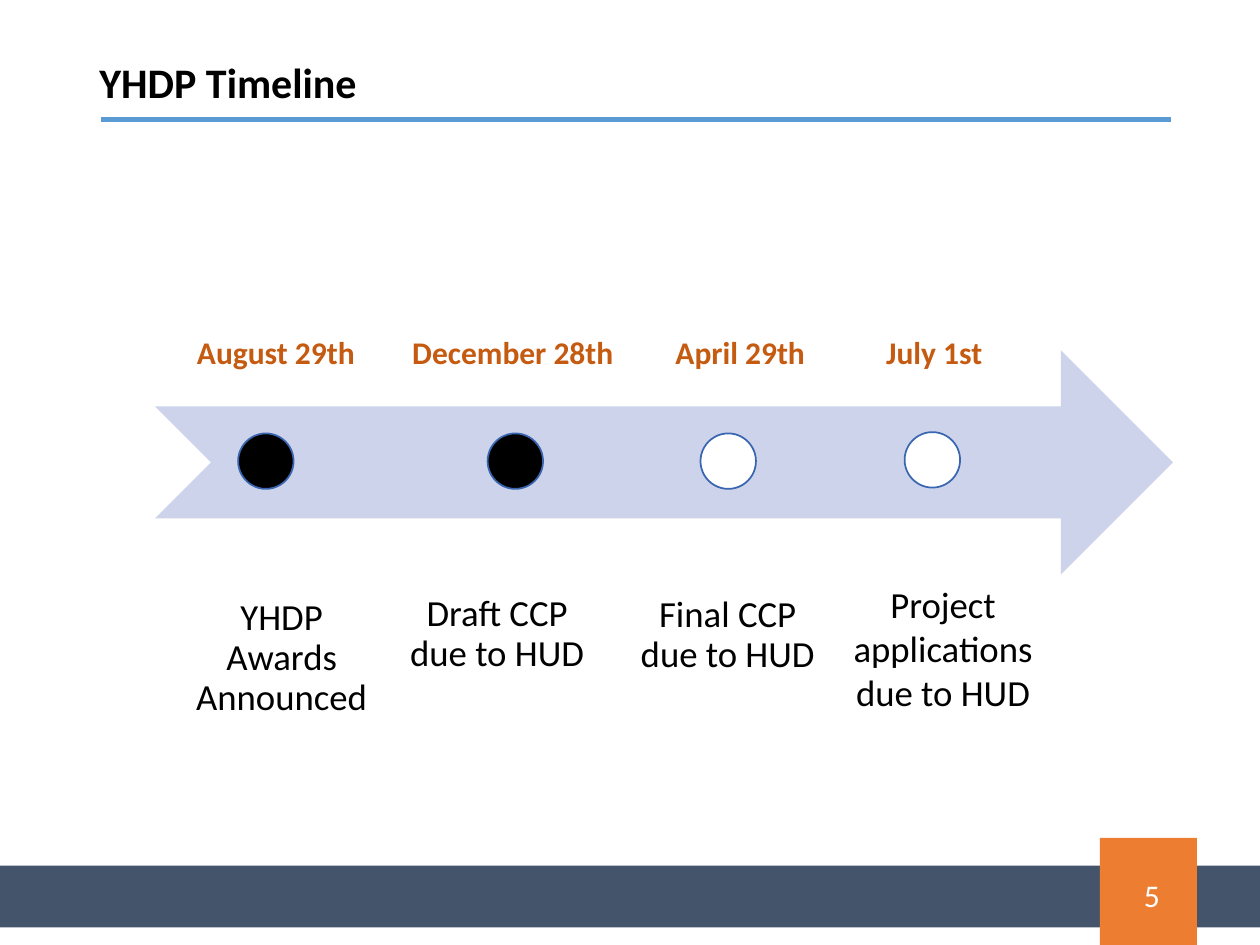
from typing import NamedTuple

from lxml import etree
from pptx import Presentation
from pptx.dml.color import RGBColor
from pptx.enum.shapes import MSO_CONNECTOR, MSO_SHAPE
from pptx.enum.text import MSO_ANCHOR, PP_ALIGN
from pptx.oxml.ns import qn
from pptx.util import Inches, Pt

RECT, OVAL = MSO_SHAPE.RECTANGLE, MSO_SHAPE.OVAL
ARROW = MSO_SHAPE.NOTCHED_RIGHT_ARROW
STRAIGHT = MSO_CONNECTOR.STRAIGHT
TOP, MIDDLE, BOTTOM = MSO_ANCHOR.TOP, MSO_ANCHOR.MIDDLE, MSO_ANCHOR.BOTTOM
LEFT, CENTER = PP_ALIGN.LEFT, PP_ALIGN.CENTER

FONT = "Calibri"
BLACK, WHITE = "000000", "FFFFFF"
NAVY, ORANGE, RULE_BLUE = "44546A", "ED7D31", "5B9BD5"
ARROW_FILL, DOT_LINE, DATE_COLOR = "CCD3EA", "3A66B1", "C55A11"
DOT_SIZE = 0.44
DATE_TOP, DATE_HEIGHT = 2.59, 0.4


class Box(NamedTuple):
    left: float
    top: float
    width: float
    height: float


class Milestone(NamedTuple):
    date: str
    date_left: float
    date_width: float
    dot_left: float
    dot_top: float
    dot_fill: str
    label: str
    label_box: Box
    label_format: dict


TIGHT = {"anchor": BOTTOM, "spacing": 0.9, "insets": (0.16, 0.16)}
LOOSE = {}

MILESTONES = [
    Milestone("August 29th", 1.44, 1.5, 1.89, 3.44, BLACK,
              "YHDP Awards Announced", Box(1.36, 4.08, 1.75, 1.78), TIGHT),
    Milestone("December 28th", 3.11, 1.92, 3.87, 3.44, BLACK,
              "Draft CCP due to HUD", Box(3.07, 4.07, 1.75, 1.44), TIGHT),
    Milestone("April 29th", 5.23, 1.29, 5.56, 3.44, WHITE,
              "Final CCP due to HUD", Box(4.9, 4.08, 1.75, 1.44), TIGHT),
    Milestone("July 1st", 6.75, 1.33, 7.18, 3.43, WHITE,
              "Project applications due to HUD", Box(6.65, 4.57, 1.67, 1.16), LOOSE),
]


def rgb(color: str) -> RGBColor:
    return RGBColor.from_string(color)


def add_shape(s, kind, box: Box, fill: str, line: str = ""):
    sp = s.shapes.add_shape(kind, *map(Inches, box))
    sp.shadow.inherit = False
    sp.fill.solid()
    sp.fill.fore_color.rgb = rgb(fill)
    if line:
        sp.line.color.rgb = rgb(line)
        sp.line.width = Pt(1)
    else:
        sp.line.fill.background()
    return sp


def add_text(s, text: str, box: Box, size: float, color: str = BLACK,
             bold: bool = False, align=CENTER, anchor=TOP, spacing: float = 1.0,
             insets: tuple[float, float] = (0.1, 0.05), wrap: bool = True) -> None:
    """Add a one-paragraph text box; insets are horizontal, then vertical."""
    tf = s.shapes.add_textbox(*map(Inches, box)).text_frame
    side, end = map(Inches, insets)
    frame_format = {"word_wrap": wrap, "vertical_anchor": anchor,
                    "margin_left": side, "margin_right": side,
                    "margin_top": end, "margin_bottom": end}
    for name, value in frame_format.items():
        setattr(tf, name, value)
    p = tf.paragraphs[0]
    p.alignment, p.line_spacing = align, spacing
    r = p.add_run()
    r.text = text
    for name, value in {"name": FONT, "size": Pt(size), "bold": bold}.items():
        setattr(r.font, name, value)
    r.font.color.rgb = rgb(color)


def add_rule(s, left: float, right: float, y: float) -> None:
    line = s.shapes.add_connector(STRAIGHT, *map(Inches, (left, y, right, y)))
    line.line.color.rgb = rgb(RULE_BLUE)
    line.line.width = Pt(3)
    etree.SubElement(line._element.spPr, qn("a:effectLst"))


def add_milestone(s, m: Milestone) -> None:
    add_text(s, m.date, Box(m.date_left, DATE_TOP, m.date_width, DATE_HEIGHT),
             18, DATE_COLOR, bold=True)
    add_shape(s, OVAL, Box(m.dot_left, m.dot_top, DOT_SIZE, DOT_SIZE),
              m.dot_fill, DOT_LINE)
    add_text(s, m.label, m.label_box, 21, **m.label_format)


def main() -> None:
    prs = Presentation()
    prs.slide_width, prs.slide_height = Inches(10), Inches(7.5)
    s = prs.slides.add_slide(prs.slide_layouts[6])

    add_shape(s, RECT, Box(0, 6.87, 10, 0.49), NAVY)
    add_shape(s, RECT, Box(8.73, 6.65, 0.77, 0.85), ORANGE)
    add_rule(s, 0.8, 9.29, 0.95)
    add_text(s, "YHDP Timeline", Box(0.69, 0.4, 8.62, 0.55), 24, bold=True,
             align=LEFT, anchor=MIDDLE, spacing=0.9)

    add_shape(s, ARROW, Box(1.23, 2.78, 8.08, 1.78), ARROW_FILL)
    for m in MILESTONES:
        add_milestone(s, m)

    add_text(s, "5", Box(8.98, 6.9, 0.33, 0.4), 18, WHITE, align=LEFT, wrap=False)
    prs.save("out.pptx")


if __name__ == "__main__":
    main()
